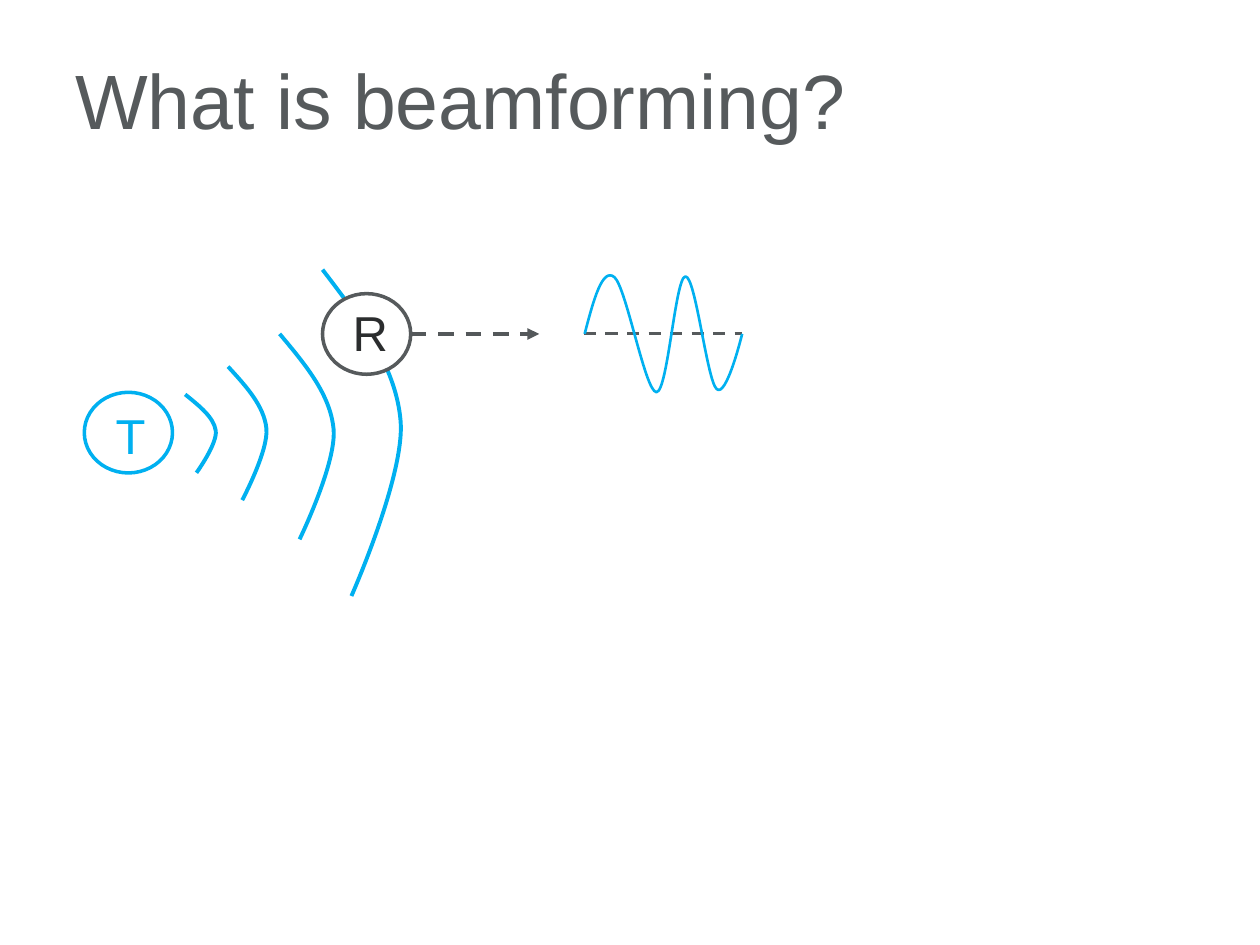
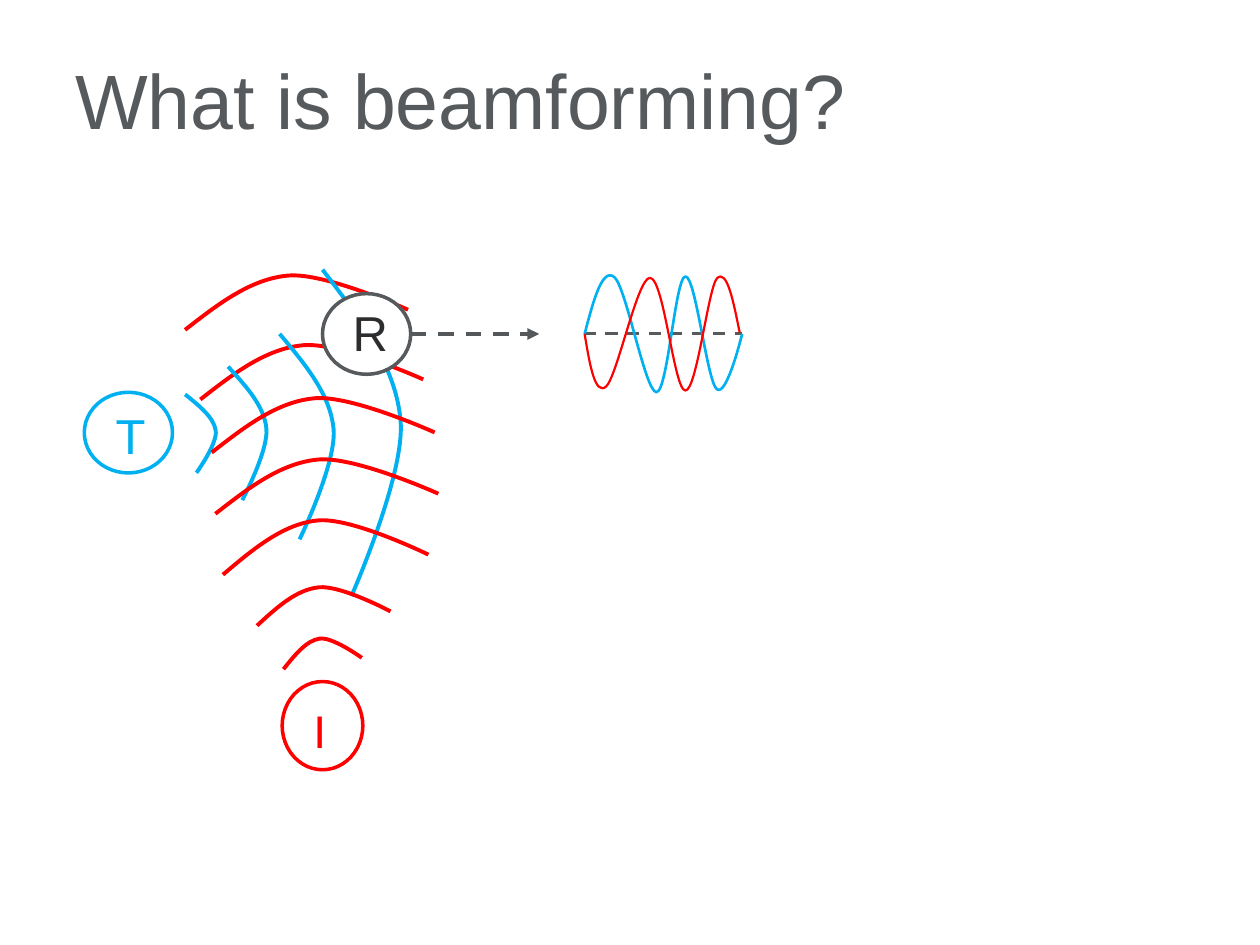
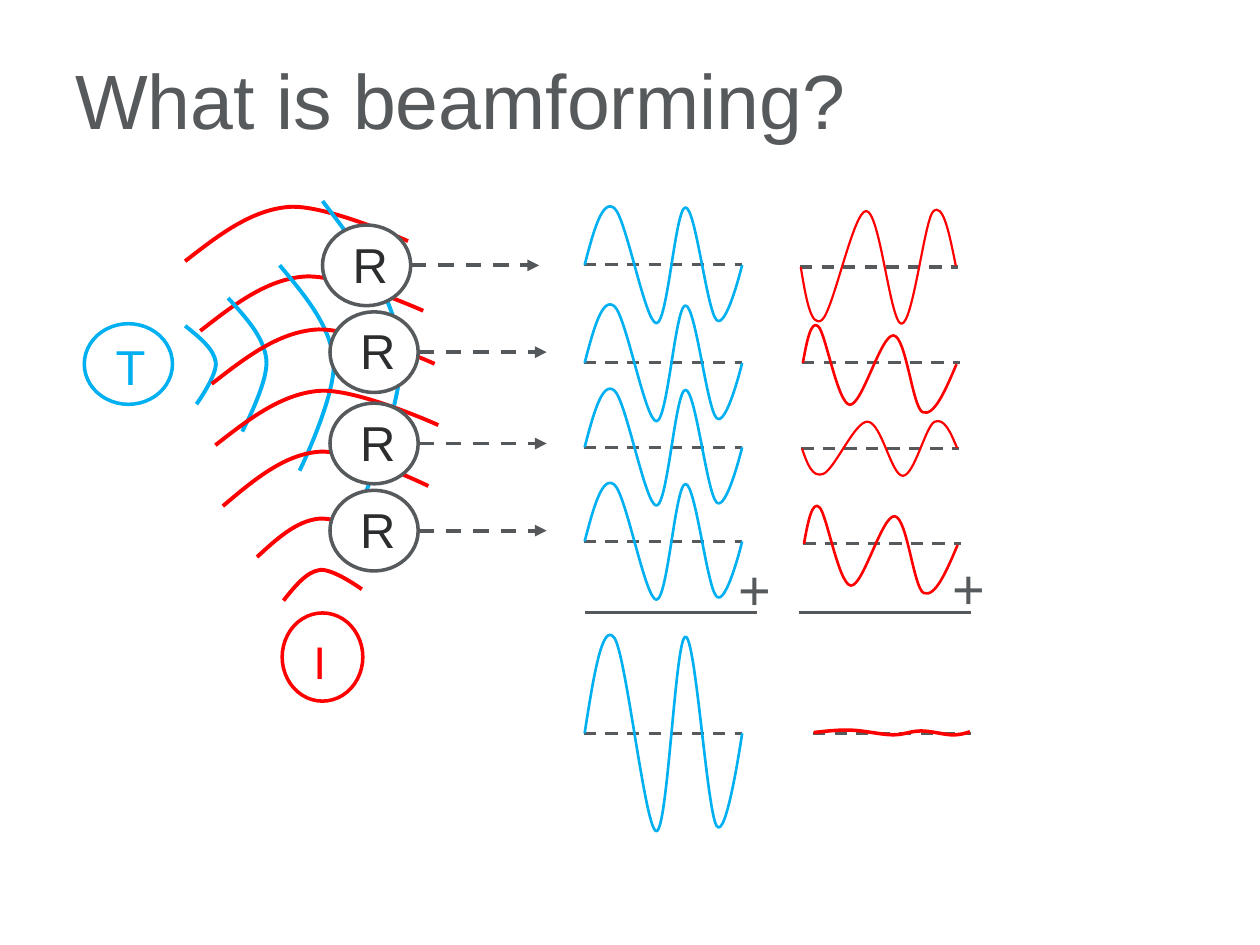
from lxml import etree
from pptx import Presentation
from pptx.dml.color import RGBColor
from pptx.enum import dml, shapes, text
from pptx.oxml.ns import qn
from pptx.util import Pt

BLUE = RGBColor(0x00, 0xB0, 0xF0)
RED = RGBColor(0xFF, 0x00, 0x00)
GREY = RGBColor(0x56, 0x5A, 0x5C)
RULE_GREY = RGBColor(0x54, 0x58, 0x5A)
INK = RGBColor(0x2B, 0x2D, 0x2E)
WHITE = RGBColor(0xFF, 0xFF, 0xFF)

CIRCLE_WIDTH, CIRCLE_HEIGHT = 50.4, 46.1
AXIS_LENGTH, ARROW_LENGTH, SUM_LENGTH = 90.4, 73.4, 98.6

# One wavefront in a unit box: (along the front, in the direction of travel)
WAVEFRONT = [(0, 0), (0.147, 0.47), (0.294, 0.94), (0.463, 1),
             (0.628, 1.06), (1, 0.37), (1, 0.37)]
# Front sizes: (length, depth), from the source outwards
FRONT_SIZES = [(44.8, 17.5), (76.3, 21.9), (117.4, 31), (127.4, 31)]
TRANSMITTER_FRONTS = [  # left, top, depth, length
    (105.8, 225.4, 17.5, 44.8), (130.3, 209.5, 21.9, 76.3),
    (159.8, 190.8, 30.8, 117.4), (184.3, 154.1, 44.6, 186.5)]
INTERFERER_FRONTS = [  # left, top, size index
    (105.8, 157.5, 3), (114.5, 197.3, 3), (121, 227.6, 3), (123.1, 262.6, 3),
    (127.4, 297.4, 2), (146.9, 335.6, 1), (162, 364.9, 0)]
FRONTS_BEHIND = 2  # the farthest fronts lie behind the transmitter's

# Received signals, relative to the start of their axis
SIGNAL = [(0, 0), (5, -19.1), (10.1, -38.2), (17, -32.4), (23.8, -26.6),
          (34.6, 33.1), (41, 33.3), (47.5, 33.4), (51.8, -32.7), (57.6, -32.8),
          (63.4, -33), (69.8, 26), (75.4, 31.5), (81, 37.1), (90, 0), (90, 0)]
NOISE = [(0, 0), (2.9, 17.3), (5.8, 35.3), (12.2, 30.2), (18.7, 24.5),
         (30.2, -32.4), (37.4, -32), (45.4, -31.7), (51.1, 32.4), (57.6, 32.4),
         (64.1, 32.4), (70.6, -25.9), (75.6, -31.7), (81.4, -37.4),
         (85, -18.7), (88.6, -0.7)]
SHIFTED_NOISE = [(0, 0), (2.2, -12.2), (4.7, -25), (8.8, -20.9), (13, -17.3),
                 (19.8, 23.2), (26.8, 23.9), (33.8, 24.5), (44.6, -16.4),
                 (51.8, -15.7), (59, -15.1), (62.6, 25.2), (68.4, 28.1),
                 (74.9, 31), (81.4, 15.8), (87.8, 0.7)]
RESIDUAL = [(0, -0.4), (7.2, -1.2), (13.7, -2), (20.9, -1.8), (28.8, -1.6),
            (38.9, 0.9), (45.4, 0.9), (51.8, 0.9), (55.4, -1.3), (61.2, -1.3),
            (67, -1.3), (72.7, 0.5), (78.5, 0.9), (83.5, 1.1), (86.4, 0),
            (89.3, -0.8)]

# Traces: axis left, axis height, curve, stretch, colour, width, draw axis
FIRST_TRACE = (333.7, 190.8, SIGNAL, 1, BLUE, 1.5, True)
SCENES = [
    {"rise": 0, "interferer": False, "receivers": [(184.3, 167.8)],
     "traces": [FIRST_TRACE], "sums": []},
    {"rise": 0, "interferer": True, "receivers": [(184.3, 167.8)],
     "traces": [FIRST_TRACE, (333.7, 190.8, NOISE, 1, RED, 1.25, False)],
     "sums": []},
    {"rise": 39.2, "interferer": True,
     "receivers": [(184.3, 128.6), (188.6, 178.2), (188.6, 230.4), (188.6, 280.2)],
     "traces": [(333.7, y, SIGNAL, 1, BLUE, 1.5, True)
                for y in (151.4, 207.4, 255.6, 309.4)] + [
         (333.7, 419, SIGNAL, 1.68, BLUE, 1.5, True),
         (457.2, 152.6, NOISE, 1, RED, 1.25, True),
         (458.4, 207.4, SHIFTED_NOISE, 1, RED, 1.5, True),
         (457.9, 256.3, NOISE, 0.48, RED, 1.25, True),
         (459, 310.7, SHIFTED_NOISE, 1, RED, 1.5, True),
         (464.6, 419, RESIDUAL, 1, RED, 2, True)],
     "sums": [(334.1, 313.2), (456.5, 312.5)]},
]


def add_curve(slide, points, colour, width):
    """Draw a chain of Bézier curves: a start, then two controls and an end each."""
    points = [(Pt(x), Pt(y)) for x, y in points]
    builder = slide.shapes.build_freeform(*points[0])
    builder.add_line_segments(points[3::3], close=False)
    curve = builder.convert_to_shape()
    for index, segment in enumerate(list(curve._element.iter(qn("a:lnTo")))):
        segment.tag = qn("a:cubicBezTo")
        end = segment[0]
        for x, y in points[3 * index + 1:3 * index + 3]:
            end.addprevious(etree.Element(
                qn("a:pt"), x=str(x - curve.left), y=str(y - curve.top)))
    curve.shadow.inherit = False
    curve.fill.background()
    curve.line.color.rgb = colour
    curve.line.width = Pt(width)


def add_level_line(slide, left, y, length, colour, width, dashed=True, arrow=False):
    line = slide.shapes.add_connector(
        shapes.MSO_CONNECTOR.STRAIGHT, Pt(left), Pt(y), Pt(left + length), Pt(y))
    line.line.color.rgb = colour
    line.line.width = Pt(width)
    if dashed:
        line.line.dash_style = dml.MSO_LINE.DASH
    properties = line._element.spPr
    if arrow:
        etree.SubElement(properties.find(qn("a:ln")), qn("a:tailEnd"), type="triangle")
    etree.SubElement(properties, qn("a:effectLst"))


presentation = Presentation()
presentation.slide_width, presentation.slide_height = Pt(720), Pt(540)

for scene in SCENES:
    slide = presentation.slides.add_slide(presentation.slide_layouts[6])
    rise = scene["rise"]

    # Wavefronts
    interferer_curves = []
    if scene["interferer"]:
        for left, top, size in INTERFERER_FRONTS:
            length, depth = FRONT_SIZES[size]
            interferer_curves.append([
                (left + along * length, top - rise + (1 - travel) * depth)
                for along, travel in WAVEFRONT])
    for points in interferer_curves[:FRONTS_BEHIND]:
        add_curve(slide, points, RED, 2.25)
    for left, top, depth, length in TRANSMITTER_FRONTS:
        points = [(left + travel * depth, top - rise + along * length)
                  for along, travel in WAVEFRONT]
        add_curve(slide, points, BLUE, 2.25)
    for points in interferer_curves[FRONTS_BEHIND:]:
        add_curve(slide, points, RED, 2.25)

    # Stations: left, top, rotation, colour
    stations = [(48.2, 224.2 - rise, 0, BLUE)]
    # Labels: wording, left, top, width, height, top margin, font, size, colour
    labels = [
        ("What is beamforming?", 36, 21.6, 648, 90, 8.3, "Arial", 44, GREY),
        ("T", 59, 227 - rise, 24.5, 41, 4.5, "Arial", 28, BLUE)]
    if scene["interferer"]:
        stations.append((159.1, 391.6 - rise, 270, RED))
        labels.append(("I", 172.1, 396 - rise, 24.5, 41, 3.6, "Calibri", 28, RED))
    for left, top in scene["receivers"]:
        stations.append((left, top, 0, GREY))
        labels.append(("R", left + 10.1, top + 0.7, 24.5, 41, 4.5, "Arial", 28, INK))
        add_level_line(slide, left + CIRCLE_WIDTH, top + CIRCLE_HEIGHT / 2,
                       ARROW_LENGTH, RULE_GREY, 2.25, arrow=True)
    for left, top, rotation, colour in stations:
        circle = slide.shapes.add_shape(
            shapes.MSO_SHAPE.OVAL, Pt(left), Pt(top), Pt(CIRCLE_WIDTH), Pt(CIRCLE_HEIGHT))
        circle.rotation = rotation
        circle.shadow.inherit = False
        circle.fill.solid()
        circle.fill.fore_color.rgb = WHITE
        circle.line.color.rgb = colour
        circle.line.width = Pt(2)

    # Received signals and their sums
    for left, y, curve, stretch, colour, width, has_axis in scene["traces"]:
        if has_axis:
            add_level_line(slide, left, y, AXIS_LENGTH, GREY, 1.75)
        points = [(left + 0.4 + dx, y + dy * stretch) for dx, dy in curve]
        add_curve(slide, points, colour, width)
    for left, plus_top in scene["sums"]:
        add_level_line(slide, left, 349.9, SUM_LENGTH, RULE_GREY, 2, dashed=False)
        labels.append(("+", left + 80.6, plus_top, 31, 46.1, 3.6, "Arial", 32, GREY))

    for wording, left, top, width, height, margin, font_name, size, colour in labels:
        box = slide.shapes.add_textbox(Pt(left), Pt(top), Pt(width), Pt(height))
        frame = box.text_frame
        frame_format = {"word_wrap": True, "margin_top": Pt(margin),
                        "vertical_anchor": text.MSO_ANCHOR.TOP}
        for name, value in frame_format.items():
            setattr(frame, name, value)
        paragraph = frame.paragraphs[0]
        paragraph.text = wording
        for name, value in {"name": font_name, "size": Pt(size)}.items():
            setattr(paragraph.font, name, value)
        paragraph.font.color.rgb = colour

presentation.save("out.pptx")
